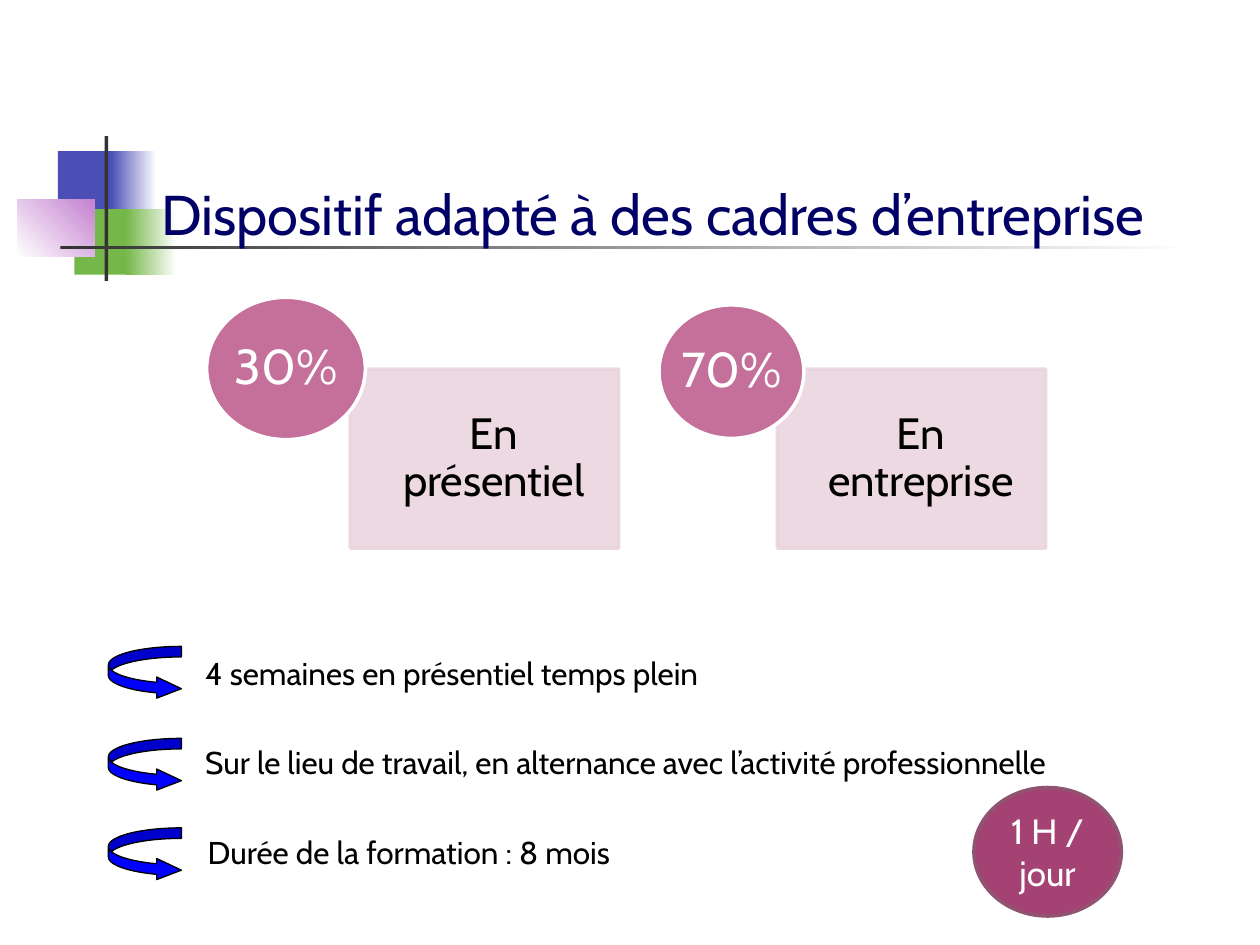
"""Builds the training scheme slide: on-site and in-company shares, with key facts."""
from dataclasses import dataclass
from typing import NamedTuple, Optional

from lxml import etree
from pptx import Presentation
from pptx.dml.color import RGBColor
from pptx.enum.shapes import MSO_SHAPE
from pptx.enum.text import MSO_ANCHOR, MSO_AUTO_SIZE, PP_ALIGN
from pptx.oxml.ns import qn
from pptx.util import Inches, Pt

RECT, OVAL, ARROW = MSO_SHAPE.RECTANGLE, MSO_SHAPE.OVAL, MSO_SHAPE.CURVED_RIGHT_ARROW
TOP, MIDDLE = MSO_ANCHOR.TOP, MSO_ANCHOR.MIDDLE
LEFT, CENTER = PP_ALIGN.LEFT, PP_ALIGN.CENTER
GROW = MSO_AUTO_SIZE.SHAPE_TO_FIT_TEXT
SLIDE_WIDTH, SLIDE_HEIGHT = Inches(10), Inches(7.5)
COLUMN, ROW = SLIDE_WIDTH / 100, SLIDE_HEIGHT / 75


@dataclass(frozen=True)
class Theme:
    """Colours, type sizes and font of the slide."""
    font: str = "Cabin"
    white: str = "FFFFFF"
    black: str = "000000"
    navy: str = "000066"
    indigo: str = "4B4EB5"
    green: str = "76B749"
    lilac: str = "C481CF"
    charcoal: str = "333333"
    card: str = "EAD5DE"
    share: str = "C4709A"
    badge: str = "A44373"
    badge_edge: str = "915372"
    arrow: str = "0000FF"
    title_size: int = 32
    share_size: int = 28
    card_size: int = 25
    badge_size: int = 20
    fact_size: int = 18


THEME = Theme()


class Area(NamedTuple):
    """A place on the grid, in columns and rows."""
    column: float
    row: float
    columns: float
    rows: float

    def lengths(self) -> list[int]:
        """Return left, top, width and height in slide units."""
        return [round(n * unit) for n, unit in zip(self, (COLUMN, ROW) * 2)]


class Look(NamedTuple):
    """Fill and outline of a shape."""
    fill: str
    fade_to: Optional[str] = None
    angle: float = 0
    edge: Optional[str] = None
    edge_width: float = 2
    opacity: int = 100


class Type(NamedTuple):
    """Format of a text."""
    size: int
    color: str
    align: PP_ALIGN = LEFT
    anchor: MSO_ANCHOR = TOP
    spacing: float = 1
    margins: tuple = (1, 0.5, 1, 0.5)
    wrap: bool = True


class Ornament(NamedTuple):
    """A rectangle of the title decoration."""
    area: Area
    look: Look


class Share(NamedTuple):
    """A part of the training: its percentage, place and label."""
    percent: str
    label: str
    card: Area
    circle: Area


class Fact(NamedTuple):
    """A line of text with its arrow."""
    text: str
    arrow_row: float
    area: Area


ORNAMENTS = (
    Ornament(Area(4.6, 12, 4.8, 5.2), Look(THEME.indigo)),
    Ornament(Area(8.8, 12, 3.6, 5.2), Look(THEME.indigo, THEME.white)),
    Ornament(Area(5.9, 16.6, 4.6, 5.2), Look(THEME.green)),
    Ornament(Area(10, 16.6, 4, 5.2), Look(THEME.green, THEME.white)),
    Ornament(Area(1.4, 15.8, 6.1, 4.6), Look(THEME.white, THEME.lilac, 45)),
    Ornament(Area(8.3, 10.8, 0.3, 11.5), Look(THEME.charcoal)),
    Ornament(Area(4.8, 19.5, 90, 0.3), Look(THEME.charcoal, THEME.white)),
)
SHARES = (
    Share("30%", "En présentiel", Area(27.8, 29.3, 21.3, 14.2), Area(16.4, 23.6, 12.6, 11.3)),
    Share("70%", "En entreprise", Area(61.7, 29.3, 21.3, 14.2), Area(52.3, 24.2, 11.5, 10.6)),
)
FACTS = (
    Fact("4 semaines en présentiel temps plein", 51.3, Area(15.3, 51.4, 72.8, 4)),
    Fact("Sur le lieu de travail, en alternance avec l’activité professionnelle",
         58.6, Area(15.3, 58.5, 75.6, 4)),
    Fact("Durée de la formation : 8 mois", 65.7, Area(15.5, 65.6, 72.8, 5.1)),
)


def set_all(target, values: dict) -> None:
    """Set each attribute of the target from the values."""
    for name, value in values.items():
        setattr(target, name, value)


def draw_shape(page, kind: MSO_SHAPE, area: Area, look: Look):
    """Draw a preset shape without shadow and return it."""
    shape = page.shapes.add_shape(kind, *area.lengths())
    shape.shadow.inherit = False
    if look.fade_to:
        shape.fill.gradient()
        shape.fill.gradient_angle = look.angle
        for stop, color in zip(shape.fill.gradient_stops, (look.fill, look.fade_to)):
            stop.color.rgb = RGBColor.from_string(color)
    else:
        shape.fill.solid()
        shape.fill.fore_color.rgb = RGBColor.from_string(look.fill)
    if look.edge:
        shape.line.color.rgb = RGBColor.from_string(look.edge)
        shape.line.width = Pt(look.edge_width)
    else:
        shape.line.fill.background()
    if look.opacity < 100:
        for color in shape._element.spPr.iter(qn("a:srgbClr")):
            etree.SubElement(color, qn("a:alpha"), val=str(look.opacity * 1000))
    return shape


def write_text(shape, text: str, style: Type) -> None:
    """Write one formatted paragraph into the shape."""
    frame = shape.text_frame
    left, top, right, bottom = (round(n * COLUMN) for n in style.margins)
    set_all(frame, dict(word_wrap=style.wrap, vertical_anchor=style.anchor,
                        margin_left=left, margin_top=top,
                        margin_right=right, margin_bottom=bottom))
    para = frame.paragraphs[0]
    set_all(para, dict(alignment=style.align, line_spacing=style.spacing))
    span = para.add_run()
    span.text = text
    set_all(span.font, dict(name=THEME.font, size=Pt(style.size)))
    span.font.color.rgb = RGBColor.from_string(style.color)


def draw_share(page, share: Share) -> None:
    """Draw a labelled card with its percentage circle."""
    card = draw_shape(page, RECT, share.card, Look(THEME.card, edge=THEME.card, opacity=90))
    write_text(card, share.label, Type(THEME.card_size, THEME.black, CENTER, MIDDLE,
                                       0.9, (3.4, 1.9, 1.9, 1.9)))
    circle = draw_shape(page, OVAL, share.circle, Look(THEME.share, edge=THEME.white))
    write_text(circle, share.percent, Type(THEME.share_size, THEME.white, CENTER, MIDDLE,
                                           0.9, (0, 0, 0, 0), False))


def draw_fact(page, fact: Fact) -> None:
    """Draw a curved arrow and the text it points to."""
    arrow = draw_shape(page, ARROW, Area(8.6, fact.arrow_row, 5.8, 4.2),
                       Look(THEME.arrow, edge=THEME.black, edge_width=0.75))
    for index, value in enumerate((0.2, 0.4, 0.467)):
        arrow.adjustments[index] = value
    box = page.shapes.add_textbox(*fact.area.lengths())
    write_text(box, fact.text, Type(THEME.fact_size, THEME.black))
    box.text_frame.auto_size = GROW


def main() -> None:
    """Build the slide and save the deck."""
    deck = Presentation()
    set_all(deck, dict(slide_width=SLIDE_WIDTH, slide_height=SLIDE_HEIGHT))
    page = deck.slides.add_slide(deck.slide_layouts[6])
    for ornament in ORNAMENTS:
        draw_shape(page, RECT, ornament.area, ornament.look)
    for share in SHARES:
        draw_share(page, share)
    title = page.shapes.add_textbox(*Area(11.8, 13.6, 95.3, 6.7).lengths())
    write_text(title, "Dispositif adapté à des cadres d’entreprise",
               Type(THEME.title_size, THEME.navy, anchor=MIDDLE))
    for fact in FACTS:
        draw_fact(page, fact)
    badge = draw_shape(page, OVAL, Area(77.3, 62.5, 11.7, 10.2),
                       Look(THEME.badge, edge=THEME.badge_edge))
    write_text(badge, "1 H / jour", Type(THEME.badge_size, THEME.white, CENTER, MIDDLE))
    deck.save("out.pptx")


if __name__ == "__main__":
    main()
